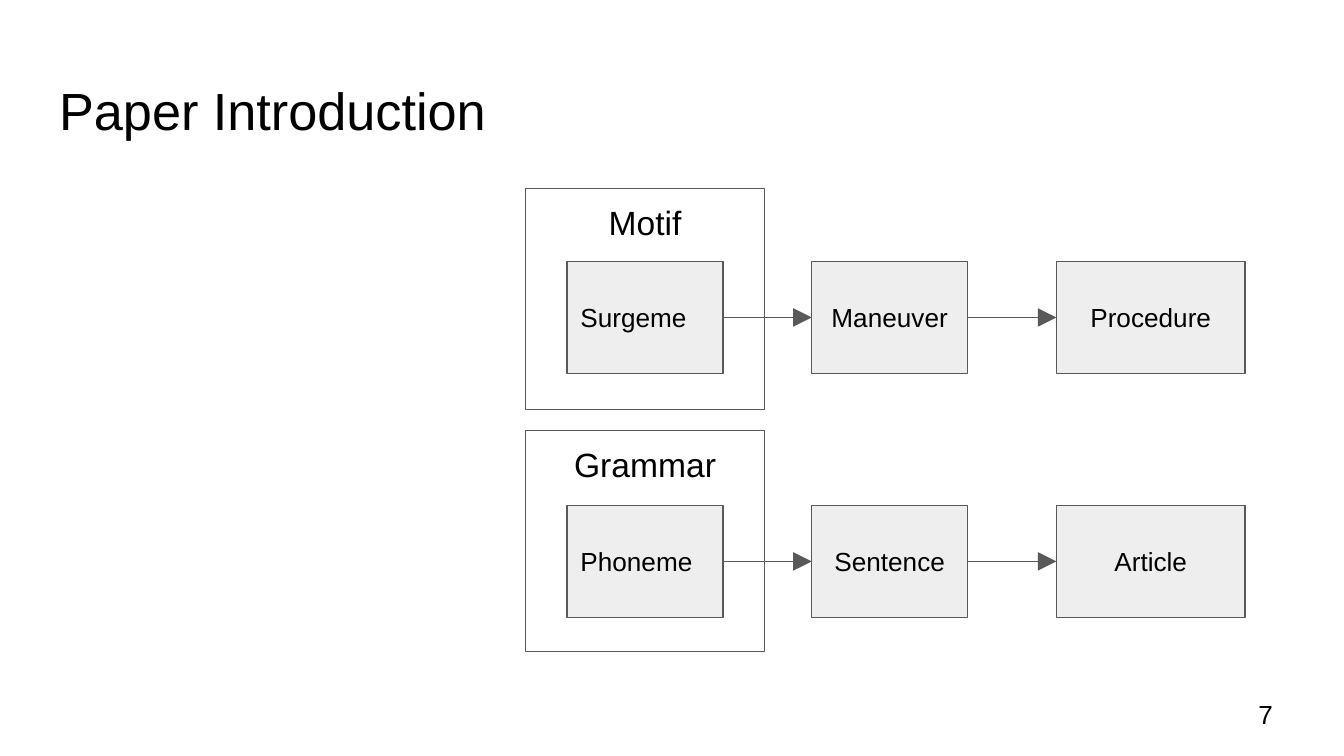
from dataclasses import dataclass
from itertools import pairwise

from lxml.etree import SubElement
from pptx import Presentation
from pptx.dml.color import RGBColor
from pptx.enum.shapes import MSO_CONNECTOR, MSO_SHAPE
from pptx.enum.text import MSO_ANCHOR, MSO_AUTO_SIZE, PP_ALIGN
from pptx.oxml.ns import qn
from pptx.util import Pt

PX = 4572


@dataclass(frozen=True)
class Theme:
    font: str = "Arial"
    ink: RGBColor = RGBColor(0x00, 0x00, 0x00)
    panel: RGBColor = RGBColor(0xEE, 0xEE, 0xEE)
    outline: RGBColor = RGBColor(0x59, 0x59, 0x59)
    title: int = 28
    heading: int = 18
    label: int = 14
    stroke: float = 0.75


THEME = Theme()
INSET = 20
STEP_WIDTHS = (232, 232, 281)
STEP_GAP = 132
ROWS = (
    ("Motif", (782, 281, 356, 329), ("Surgeme", "Maneuver", "Procedure"), (844, 389, 1009, 167)),
    ("Grammar", (782, 641, 356, 329), ("Phoneme", "Sentence", "Article"), (844, 752, 1009, 167)),
)


def emu(box):
    return [length * PX for length in box]


def apply(target, values):
    for name, value in values.items():
        setattr(target, name, value)


def write(shape, text, size, align=PP_ALIGN.LEFT, anchor=MSO_ANCHOR.MIDDLE):
    frame = shape.text_frame
    frame.text = text
    margins = {f"margin_{side}": INSET * PX for side in ("left", "top", "right", "bottom")}
    apply(frame, margins | {
        "word_wrap": True, "auto_size": MSO_AUTO_SIZE.NONE, "vertical_anchor": anchor,
    })
    paragraph = frame.paragraphs[0]
    paragraph.alignment = align
    font = paragraph.runs[0].font
    apply(font, {"name": THEME.font, "size": Pt(size)})
    font.color.rgb = THEME.ink


def stroke(line):
    line.color.rgb = THEME.outline
    line.width = Pt(THEME.stroke)


def add_box(slide, box, fill=None):
    shape = slide.shapes.add_shape(MSO_SHAPE.RECTANGLE, *emu(box))
    shape.shadow.inherit = False
    if fill is None:
        shape.fill.background()
    else:
        shape.fill.solid()
        shape.fill.fore_color.rgb = fill
    stroke(shape.line)
    return shape


def add_arrow(slide, source, target):
    arrow = slide.shapes.add_connector(MSO_CONNECTOR.STRAIGHT, 0, 0, 0, 0)
    arrow.begin_connect(source, 3)
    arrow.end_connect(target, 1)
    stroke(arrow.line)
    line_xml = arrow._element.spPr.find(qn("a:ln"))
    SubElement(line_xml, qn("a:tailEnd"), type="triangle", w="lg", len="lg")
    SubElement(arrow._element.spPr, qn("a:effectLst"))


def add_title(slide, text, box):
    title = slide.shapes.title
    apply(title, dict(zip(("left", "top", "width", "height"), emu(box))))
    write(title, text, THEME.title, anchor=MSO_ANCHOR.TOP)


def add_page_number(slide, text, box):
    write(slide.shapes.add_textbox(*emu(box)), text, THEME.label)


def add_flow(slide, labels, box):
    left, top, _, height = box
    steps = []
    for label, width in zip(labels, STEP_WIDTHS):
        step = add_box(slide, (left, top, width, height), THEME.panel)
        write(step, label, THEME.label, PP_ALIGN.CENTER if steps else PP_ALIGN.LEFT)
        steps.append(step)
        left += width + STEP_GAP
    for source, target in pairwise(steps):
        add_arrow(slide, source, target)


def add_group_frame(slide, heading, box):
    write(add_box(slide, box), heading, THEME.heading, PP_ALIGN.CENTER, MSO_ANCHOR.TOP)


def main():
    deck = Presentation()
    apply(deck, {"slide_width": 2000 * PX, "slide_height": 1125 * PX})
    slide = deck.slides.add_slide(deck.slide_layouts[5])
    add_title(slide, "Paper Introduction", (68, 97, 1864, 126))
    add_page_number(slide, "7", (1853, 1020, 120, 86))
    for _, _, labels, flow_box in ROWS:
        add_flow(slide, labels, flow_box)
    for heading, frame_box, _, _ in ROWS:
        add_group_frame(slide, heading, frame_box)
    deck.save("out.pptx")


if __name__ == "__main__":
    main()
